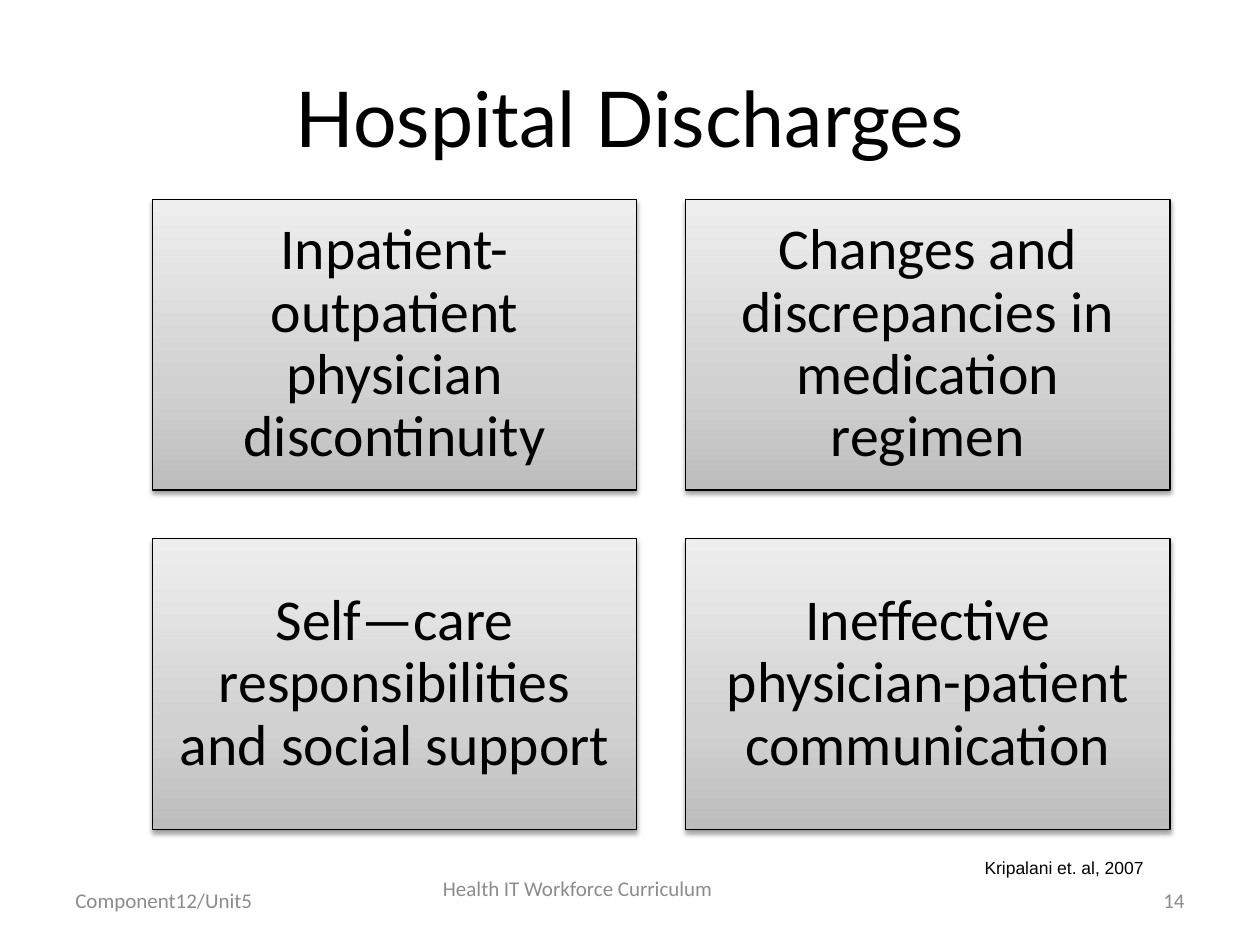
from copy import deepcopy

from lxml.etree import SubElement
from pptx import Presentation
from pptx.dml.color import RGBColor
from pptx.enum.shapes import MSO_SHAPE
from pptx.enum.text import MSO_ANCHOR, PP_ALIGN
from pptx.oxml.ns import qn
from pptx.util import Cm, Pt

BLACK = RGBColor(0x00, 0x00, 0x00)
GREY = RGBColor(0x8C, 0x8C, 0x8C)
GRADIENT = (
    (0, RGBColor(0xBD, 0xBD, 0xBD)),
    (0.35, RGBColor(0xD1, 0xD1, 0xD1)),
    (1, RGBColor(0xEE, 0xEE, 0xEE)),
)
ISSUES = (
    "Inpatient-outpatient physician discontinuity",
    "Changes and discrepancies in medication regimen",
    "Self—care responsibilities and social support",
    "Ineffective physician-patient communication",
)
CARD_WIDTH, CARD_HEIGHT, CARD_GAP = 9.77, 5.86, 0.98
GRID_LEFT, GRID_TOP = 3.07, 4.02
FOOTER_TOP, FOOTER_HEIGHT = 17.65, 1.01


def write_text(shape, text, size, font="Calibri", color=BLACK,
               align=PP_ALIGN.CENTER, anchor=MSO_ANCHOR.MIDDLE, spacing=None):
    frame = shape.text_frame
    frame.word_wrap = True
    frame.vertical_anchor = anchor
    para = frame.paragraphs[0]
    para.alignment = align
    para.line_spacing = spacing
    span = para.add_run()
    span.text = text
    span.font.size = Pt(size)
    span.font.name = font
    span.font.color.rgb = color
    return frame


def add_title(page, text):
    title = page.shapes.title
    title.left, title.top = Cm(1.27), Cm(0.76)
    title.width, title.height = Cm(22.86), Cm(3.18)
    write_text(title, text, 44, font="Lato")


def fill_gradient(shape):
    shape.fill.gradient()
    shape.fill.gradient_angle = 90
    stops = shape._element.spPr.find(qn("a:gradFill")).find(qn("a:gsLst"))
    stops.append(deepcopy(stops[-1]))
    for stop, (position, color) in zip(shape.fill.gradient_stops, GRADIENT):
        stop.position = position
        stop.color.rgb = color


def add_shadow(shape):
    shape.shadow.inherit = False
    effects = shape._element.spPr.find(qn("a:effectLst"))
    shadow = SubElement(effects, qn("a:outerShdw"), blurRad=str(Pt(3.1)),
                        dist=str(Pt(1.6)), dir="5400000", rotWithShape="0")
    color = SubElement(shadow, qn("a:srgbClr"), val=str(BLACK))
    SubElement(color, qn("a:alpha"), val="38000")


def add_card(page, text, left, top):
    card = page.shapes.add_shape(MSO_SHAPE.RECTANGLE, Cm(left), Cm(top),
                                 Cm(CARD_WIDTH), Cm(CARD_HEIGHT))
    fill_gradient(card)
    card.line.color.rgb = BLACK
    card.line.width = Pt(0.75)
    add_shadow(card)
    frame = write_text(card, text, 33, spacing=0.9)
    frame.margin_left = frame.margin_right = Cm(0.35)
    frame.margin_top = frame.margin_bottom = Cm(0.35)


def add_label(page, text, left, top, width, height, size=12, **style):
    box = page.shapes.add_textbox(Cm(left), Cm(top), Cm(width), Cm(height))
    return write_text(box, text, size, **style)


def add_footer(page, text, left, width, **style):
    return add_label(page, text, left, FOOTER_TOP, width, FOOTER_HEIGHT,
                     color=GREY, **style)


def main():
    deck = Presentation()
    deck.slide_width, deck.slide_height = Cm(25.4), Cm(19.05)
    page = deck.slides.add_slide(deck.slide_layouts[5])
    add_title(page, "Hospital Discharges")
    for index, issue in enumerate(ISSUES):
        row, column = divmod(index, 2)
        add_card(page, issue,
                 GRID_LEFT + column * (CARD_WIDTH + CARD_GAP),
                 GRID_TOP + row * (CARD_HEIGHT + CARD_GAP))
    add_label(page, "Kripalani et. al, 2007", 15.04, 17.15, 8.26, 0.69,
              size=10, font="Arial", align=PP_ALIGN.RIGHT,
              anchor=MSO_ANCHOR.TOP)
    add_footer(page, "Component12/Unit5", 1.27, 5.93, align=PP_ALIGN.LEFT)
    add_footer(page, "14", 18.2, 5.93, align=PP_ALIGN.RIGHT)
    center = add_footer(page, "Health IT Workforce Curriculum", 8.68, 8.05,
                        align=PP_ALIGN.LEFT, anchor=MSO_ANCHOR.TOP)
    center.margin_top = Cm(0)
    deck.save("out.pptx")


if __name__ == "__main__":
    main()
